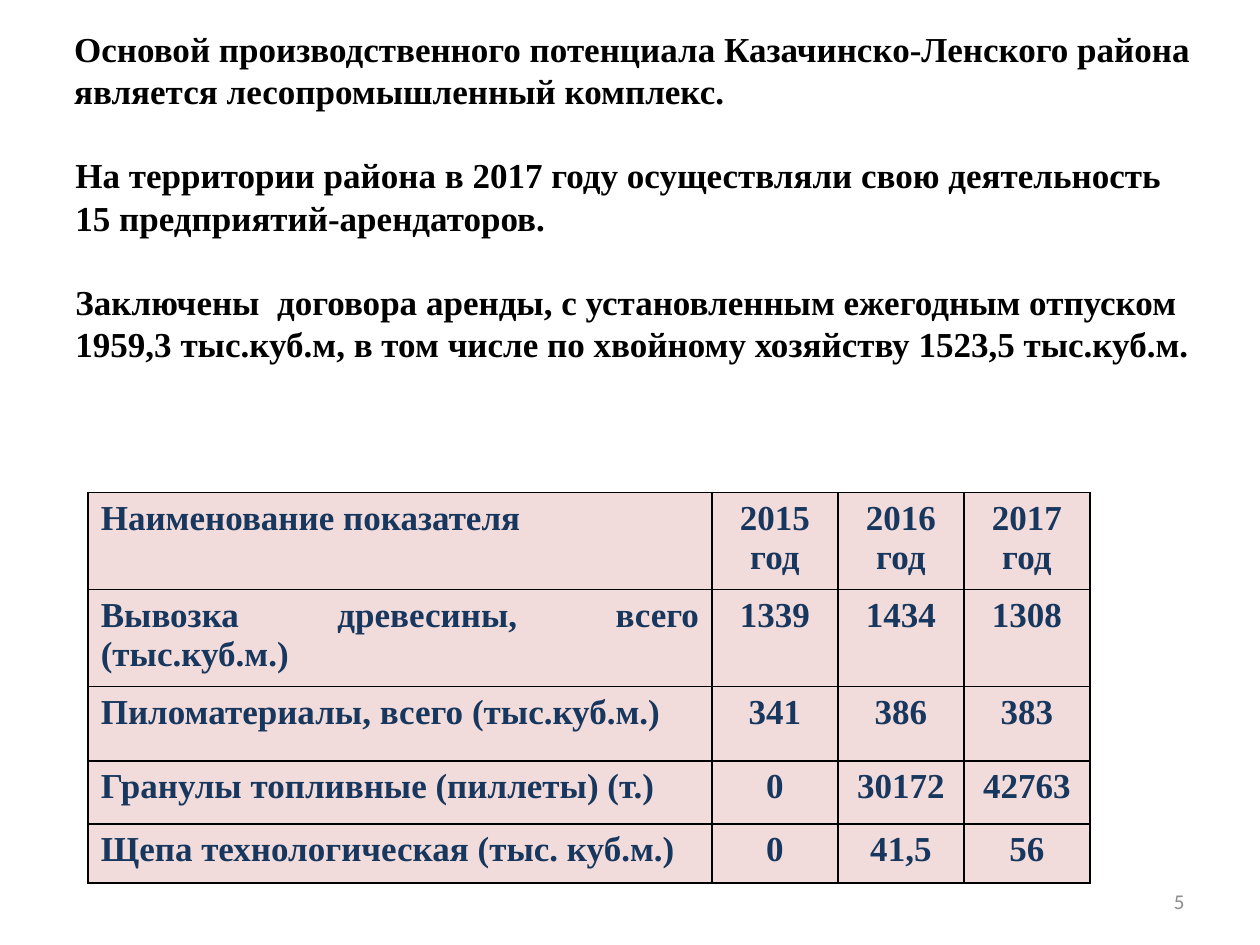
import pptx
import pptx.util
import pptx.dml.color
import pptx.enum.text
import pptx.oxml
from lxml import etree

Inches, Pt = pptx.util.Inches, pptx.util.Pt
ALIGN = pptx.enum.text.PP_ALIGN
ANCHOR = pptx.enum.text.MSO_ANCHOR

COLORS = {"text": "000000", "table": "17375E", "cell": "F2DCDB",
          "border": "000000", "number": "8C8C8C"}
SERIF = "Times New Roman"

STATEMENTS = [
    ("Основой производственного потенциала Казачинско-Ленского района",
     "является лесопромышленный комплекс."),
    ("На территории района в 2017 году осуществляли свою деятельность",
     "15 предприятий-арендаторов."),
    ("Заключены  договора аренды, с установленным ежегодным отпуском",
     "1959,3 тыс.куб.м, в том числе по хвойному хозяйству 1523,5 тыс.куб.м."),
]
OUTPUT = [
    ("Наименование показателя", "2015\nгод", "2016\nгод", "2017\nгод"),
    ("Вывозка древесины, всего (тыс.куб.м.)", "1339", "1434", "1308"),
    ("Пиломатериалы, всего (тыс.куб.м.)", "341", "386", "383"),
    ("Гранулы топливные (пиллеты) (т.)", "0", "30172", "42763"),
    ("Щепа технологическая (тыс. куб.м.)", "0", "41,5", "56"),
]
COL_WIDTHS = [4.95, 1, 1, 1]
ROW_HEIGHTS = [0.77, 0.77, 0.59, 0.5, 0.47]
LINE_PITCH = Pt(24.1)


def rgb(name):
    return pptx.dml.color.RGBColor.from_string(COLORS[name])


def style(p, font, size, color, align, bold=False):
    p.alignment = align
    p.font.name, p.font.size, p.font.bold = font, Pt(size), bold
    p.font.color.rgb = rgb(color)


def add_text_box(slide, left, top, width, height):
    tf = slide.shapes.add_textbox(*map(Inches, (left, top, width, height))).text_frame
    tf.word_wrap = True
    tf.vertical_anchor = ANCHOR.MIDDLE
    return tf


def add_borders(cell):
    """Put the four side lines before the fill, as the schema orders them."""
    tc_pr = cell._tc.get_or_add_tcPr()
    for i, side in enumerate(("lnL", "lnR", "lnT", "lnB")):
        ln = etree.Element(pptx.oxml.ns.qn("a:" + side), w=str(Pt(1)))
        fill = etree.SubElement(ln, pptx.oxml.ns.qn("a:solidFill"))
        etree.SubElement(fill, pptx.oxml.ns.qn("a:srgbClr"), val=COLORS["border"])
        tc_pr.insert(i, ln)


def add_statements(slide):
    tf = add_text_box(slide, 0, 0.16, 9.69, 2.79)
    for i, lines in enumerate(STATEMENTS):
        for j, line in enumerate(lines):
            p = tf.add_paragraph() if i or j else tf.paragraphs[0]
            p.text = line
            p._p.get_or_add_pPr().set("indent", str(Inches(0.5 if i else 0.49)))
            p.line_spacing = LINE_PITCH
            if i and j == 0:
                p.space_before = LINE_PITCH
            style(p, SERIF, 20, "text", ALIGN.JUSTIFY, True)


def add_output_table(slide):
    table = slide.shapes.add_table(
        len(OUTPUT), len(COL_WIDTHS), Inches(0.7), Inches(3.91),
        Inches(sum(COL_WIDTHS)), Inches(sum(ROW_HEIGHTS))).table
    for column, width in zip(table.columns, COL_WIDTHS):
        column.width = Inches(width)
    for r, (row, height) in enumerate(zip(OUTPUT, ROW_HEIGHTS)):
        table.rows[r].height = Inches(height)
        for c, value in enumerate(row):
            cell = table.cell(r, c)
            cell.text = value
            cell.fill.solid()
            cell.fill.fore_color.rgb = rgb("cell")
            add_borders(cell)
            align = ALIGN.CENTER if c else ALIGN.JUSTIFY if r else ALIGN.LEFT
            for p in cell.text_frame.paragraphs:
                style(p, SERIF, 20, "table", align, True)


def main():
    prs = pptx.Presentation()
    prs.slide_width, prs.slide_height = Inches(10), Inches(7.5)
    slide = prs.slides.add_slide(prs.slide_layouts[6])
    number = add_text_box(slide, 7.17, 6.95, 2.33, 0.4).paragraphs[0]
    number.text = "5"
    style(number, "Calibri", 12, "number", ALIGN.RIGHT)
    add_output_table(slide)
    add_statements(slide)
    prs.save("out.pptx")


if __name__ == "__main__":
    main()
